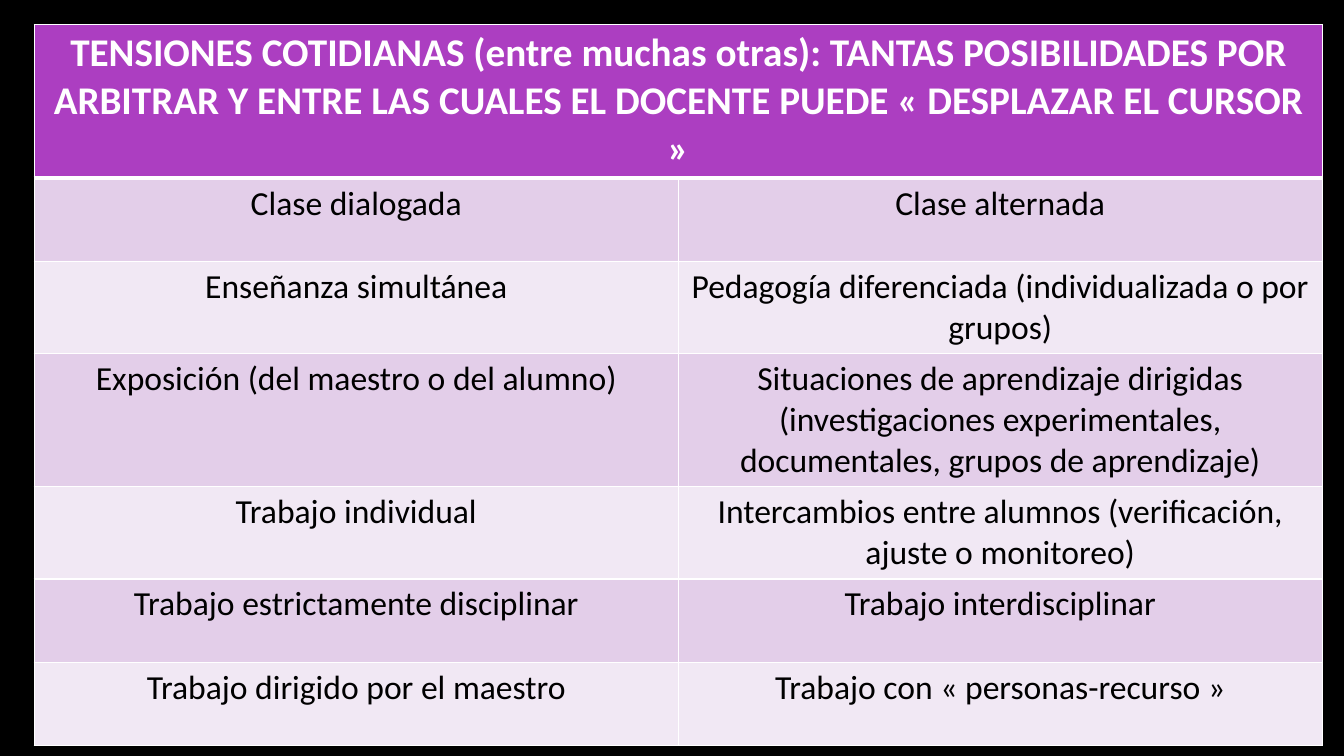
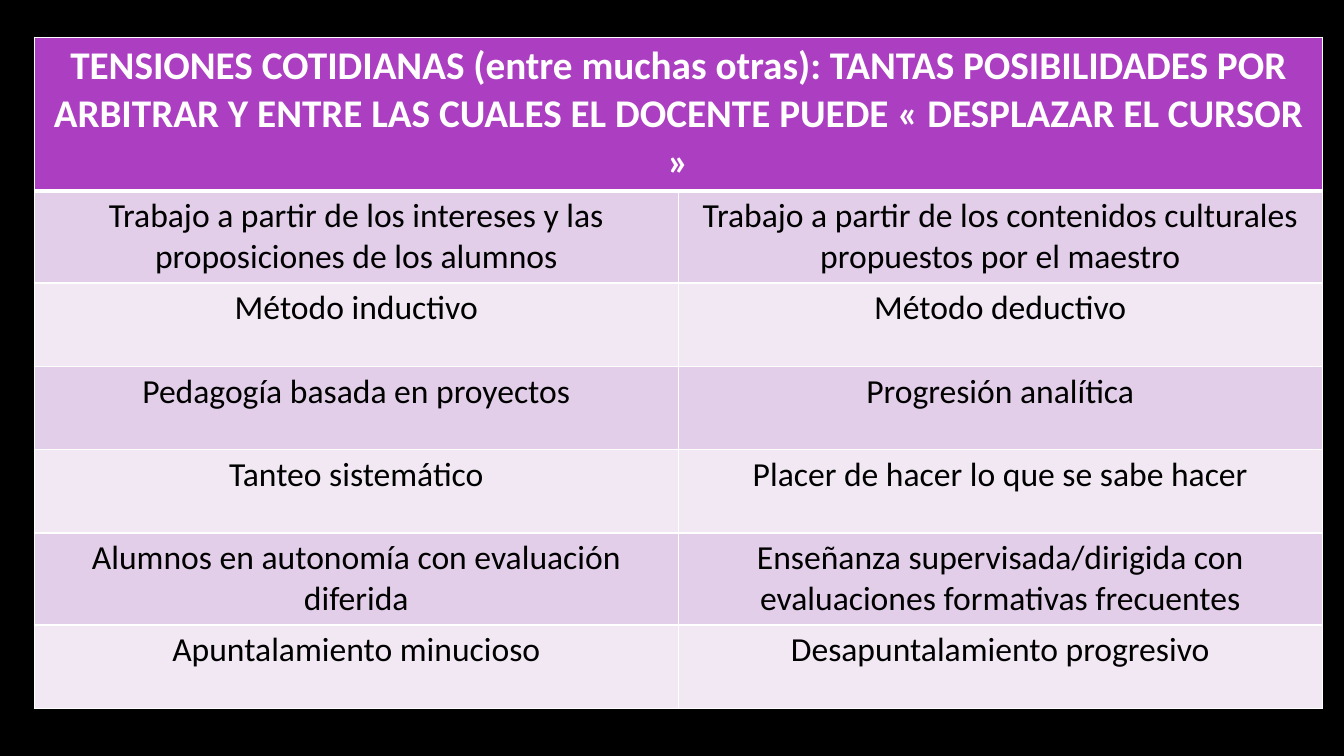
from lxml import etree
from pptx import Presentation
from pptx.dml.color import RGBColor
from pptx.enum import text
from pptx.oxml import ns
from pptx.util import Pt

FONT = "Calibri"
BLACK, WHITE, PURPLE = "000000", "FFFFFF", "AC3EC1"
BANDS = ["E3CEE9", "F1E8F4"]
LEFT, COLUMN_WIDTH = 24.5, 460
HEADING_HEIGHT, ROW_HEIGHT = 108.5, 59.5
HEADING = (
    "TENSIONES COTIDIANAS (entre muchas otras): TANTAS POSIBILIDADES POR "
    "ARBITRAR Y ENTRE LAS CUALES EL DOCENTE PUEDE « DESPLAZAR EL CURSOR »"
)

METHODS = [
    ("Clase dialogada", "Clase alternada"),
    ("Enseñanza simultánea",
     "Pedagogía diferenciada (individualizada o por grupos)"),
    ("Exposición (del maestro o del alumno)",
     "Situaciones de aprendizaje dirigidas (investigaciones experimentales, "
     "documentales, grupos de aprendizaje)"),
    ("Trabajo individual",
     "Intercambios entre alumnos (verificación, ajuste o monitoreo)"),
    ("Trabajo estrictamente disciplinar", "Trabajo interdisciplinar"),
    ("Trabajo dirigido por el maestro", "Trabajo con « personas-recurso »"),
]
APPROACHES = [
    ("Trabajo a partir de los intereses y las proposiciones de los alumnos",
     "Trabajo a partir de los contenidos culturales propuestos por el maestro"),
    ("Método inductivo", "Método deductivo"),
    ("Pedagogía basada en proyectos", "Progresión analítica"),
    ("Tanteo sistemático", "Placer de hacer lo que se sabe hacer"),
    ("Alumnos en autonomía con evaluación diferida",
     "Enseñanza supervisada/dirigida con evaluaciones formativas frecuentes"),
    ("Apuntalamiento minucioso", "Desapuntalamiento progresivo"),
]


def paint(fill, color):
    fill.solid()
    fill.fore_color.rgb = RGBColor.from_string(color)


def add_borders(cell, top=1, bottom=1):
    """Draw white lines round a cell; widths are in points."""
    properties = cell._tc.get_or_add_tcPr()
    for side, width in (("L", 1), ("R", 1), ("T", top), ("B", bottom)):
        line = etree.SubElement(properties, ns.qn(f"a:ln{side}"), w=str(Pt(width)))
        fill = etree.SubElement(line, ns.qn("a:solidFill"))
        etree.SubElement(fill, ns.qn("a:srgbClr"), val=WHITE)


def write(cell, words, size=24, color=BLACK, bold=False):
    para = cell.text_frame.paragraphs[0]
    para.alignment = text.PP_ALIGN.CENTER
    span = para.add_run()
    span.text = words
    span.font.name = FONT
    span.font.size = Pt(size)
    span.font.bold = bold
    span.font.color.rgb = RGBColor.from_string(color)


def add_tension_table(page, top, pairs):
    """Add a merged heading over banded rows of opposed practices."""
    height = HEADING_HEIGHT + ROW_HEIGHT * len(pairs)
    table = page.shapes.add_table(
        len(pairs) + 1, 2, Pt(LEFT), Pt(top), Pt(2 * COLUMN_WIDTH), Pt(height)
    ).table
    for column in table.columns:
        column.width = Pt(COLUMN_WIDTH)
    for row in table.rows:
        row.height = Pt(ROW_HEIGHT)
    table.rows[0].height = Pt(HEADING_HEIGHT)

    heading = table.cell(0, 0)
    heading.merge(table.cell(0, 1))
    write(heading, HEADING, size=28, color=WHITE, bold=True)
    for cell in table.rows[0].cells:
        add_borders(cell, bottom=3)
        paint(cell.fill, PURPLE)

    for index, pair in enumerate(pairs):
        for cell, words in zip(table.rows[index + 1].cells, pair):
            write(cell, words)
            add_borders(cell, top=1 if index else 3)
            paint(cell.fill, BANDS[index % 2])


def main():
    deck = Presentation()
    deck.slide_width, deck.slide_height = Pt(960), Pt(540)
    paint(deck.slide_master.background.fill, BLACK)
    for top, pairs in ((17.5, METHODS), (26.5, APPROACHES)):
        page = deck.slides.add_slide(deck.slide_layouts[6])
        add_tension_table(page, top, pairs)
    deck.save("out.pptx")


if __name__ == "__main__":
    main()
